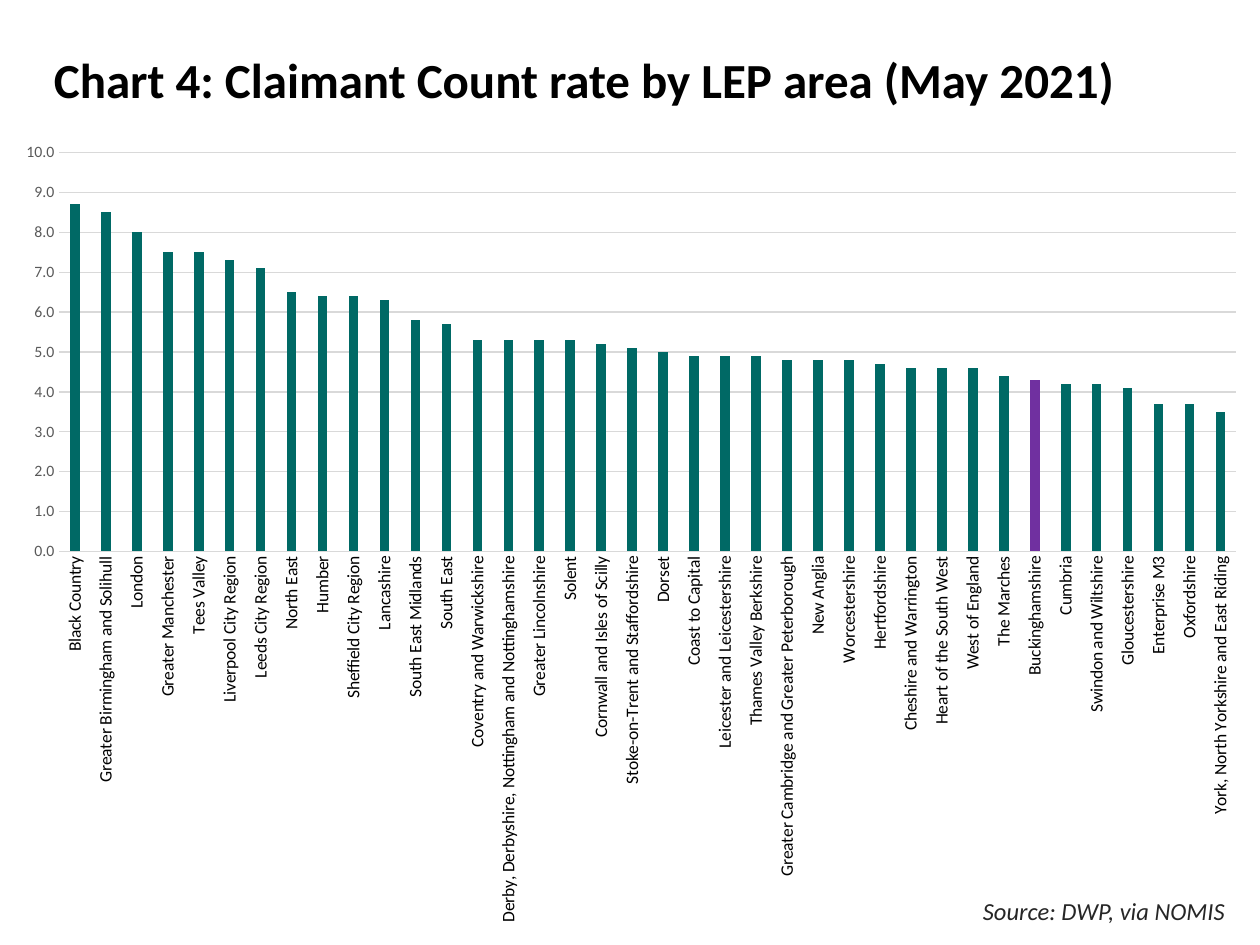
from dataclasses import dataclass

from pptx import Presentation
from pptx.chart.data import CategoryChartData as ChartData
from pptx.dml.color import RGBColor as RGB
from pptx.enum.chart import XL_CHART_TYPE as Kind, XL_TICK_MARK as Tick
from pptx.enum.text import MSO_ANCHOR as Anchor, PP_ALIGN as Align
from pptx.util import Inches, Pt


@dataclass(frozen=True)
class Theme:
    font: str = "Calibri"
    ink: str = "000000"
    soft: str = "262626"
    grey: str = "595959"
    grid: str = "D9D9D9"
    back: str = "FFFFFF"
    bar: str = "006965"
    mark: str = "7030A0"
    head: int = 28
    note: int = 14
    label: int = 10
    scale: int = 9


THEME = Theme()
FOCUS = "Buckinghamshire"
RATES = [
    ("Black Country", 8.7),
    ("Greater Birmingham and Solihull", 8.5),
    ("London", 8),
    ("Greater Manchester", 7.5),
    ("Tees Valley", 7.5),
    ("Liverpool City Region", 7.3),
    ("Leeds City Region", 7.1),
    ("North East", 6.5),
    ("Humber", 6.4),
    ("Sheffield City Region", 6.4),
    ("Lancashire", 6.3),
    ("South East Midlands", 5.8),
    ("South East", 5.7),
    ("Coventry and Warwickshire", 5.3),
    ("Derby, Derbyshire, Nottingham and Nottinghamshire", 5.3),
    ("Greater Lincolnshire", 5.3),
    ("Solent", 5.3),
    ("Cornwall and Isles of Scilly", 5.2),
    ("Stoke-on-Trent and Staffordshire", 5.1),
    ("Dorset", 5),
    ("Coast to Capital", 4.9),
    ("Leicester and Leicestershire", 4.9),
    ("Thames Valley Berkshire", 4.9),
    ("Greater Cambridge and Greater Peterborough", 4.8),
    ("New Anglia", 4.8),
    ("Worcestershire", 4.8),
    ("Hertfordshire", 4.7),
    ("Cheshire and Warrington", 4.6),
    ("Heart of the South West", 4.6),
    ("West of England", 4.6),
    ("The Marches", 4.4),
    (FOCUS, 4.3),
    ("Cumbria", 4.2),
    ("Swindon and Wiltshire", 4.2),
    ("Gloucestershire", 4.1),
    ("Enterprise M3", 3.7),
    ("Oxfordshire", 3.7),
    ("York, North Yorkshire and East Riding", 3.5),
]


def set_font(font, size, color, bold=False, italic=False):
    font.name, font.size = THEME.font, Pt(size)
    font.color.rgb = RGB.from_string(color)
    font.bold, font.italic = bold, italic


def set_line(line, color):
    line.color.rgb = RGB.from_string(color)
    line.width = Pt(0.75)


def paint(fill, color):
    fill.solid()
    fill.fore_color.rgb = RGB.from_string(color)


def add_text(slide, box, text, size, color, align=Align.LEFT,
             anchor=Anchor.TOP, spacing=1.0, fill=None, **style):
    shape = slide.shapes.add_textbox(*map(Inches, box))
    if fill:
        paint(shape.fill, fill)
    frame = shape.text_frame
    frame.word_wrap, frame.vertical_anchor = True, anchor
    para = frame.paragraphs[0]
    para.alignment, para.line_spacing = align, spacing
    run = para.add_run()
    run.text = text
    set_font(run.font, size, color, **style)


def add_bars(slide, box):
    names, values = zip(*RATES)
    data = ChartData(number_format="#,##0.0")
    data.categories = names
    data.add_series("Claimant Count rate", values)
    chart = slide.shapes.add_chart(
        Kind.COLUMN_CLUSTERED, *map(Inches, box), data).chart
    chart.has_legend = chart.has_title = False
    set_font(chart.font, THEME.label, THEME.ink)

    plot = chart.plots[0]
    plot.gap_width, plot.overlap = 219, -27
    plot.vary_by_categories = False
    series = plot.series[0]
    series.invert_if_negative = False
    paint(series.format.fill, THEME.bar)
    paint(series.points[names.index(FOCUS)].format.fill, THEME.mark)
    style_axes(chart.category_axis, chart.value_axis)


def style_axes(areas, rates):
    for axis in (areas, rates):
        axis.major_tick_mark = axis.minor_tick_mark = Tick.NONE
    set_font(areas.tick_labels.font, THEME.label, THEME.ink)
    set_line(areas.format.line, THEME.grid)
    # Labels read upwards
    areas.tick_labels.font
    turn = areas._element.txPr.bodyPr
    turn.set("rot", "-5400000")
    turn.set("vert", "horz")

    set_font(rates.tick_labels.font, THEME.scale, THEME.grey)
    rates.tick_labels.number_format = "#,##0.0"
    rates.tick_labels.number_format_is_linked = False
    rates.minimum_scale, rates.maximum_scale, rates.major_unit = 0, 10, 1
    rates.format.line.fill.background()
    set_line(rates.major_gridlines.format.line, THEME.grid)


def main():
    deck = Presentation()
    deck.slide_width, deck.slide_height = Inches(10), Inches(7.5)
    slide = deck.slides.add_slide(deck.slide_layouts[6])
    add_text(slide, (0.33, 0.27, 9.36, 0.77),
             "Chart 4: Claimant Count rate by LEP area (May 2021)",
             THEME.head, THEME.ink, anchor=Anchor.MIDDLE, spacing=0.9,
             fill=THEME.back, bold=True)
    add_bars(slide, (0.01, 1.01, 10, 6.44))
    add_text(slide, (7.44, 7.06, 2.38, 0.34), "Source: DWP, via NOMIS",
             THEME.note, THEME.soft, align=Align.RIGHT, italic=True)
    deck.save("out.pptx")


if __name__ == "__main__":
    main()
